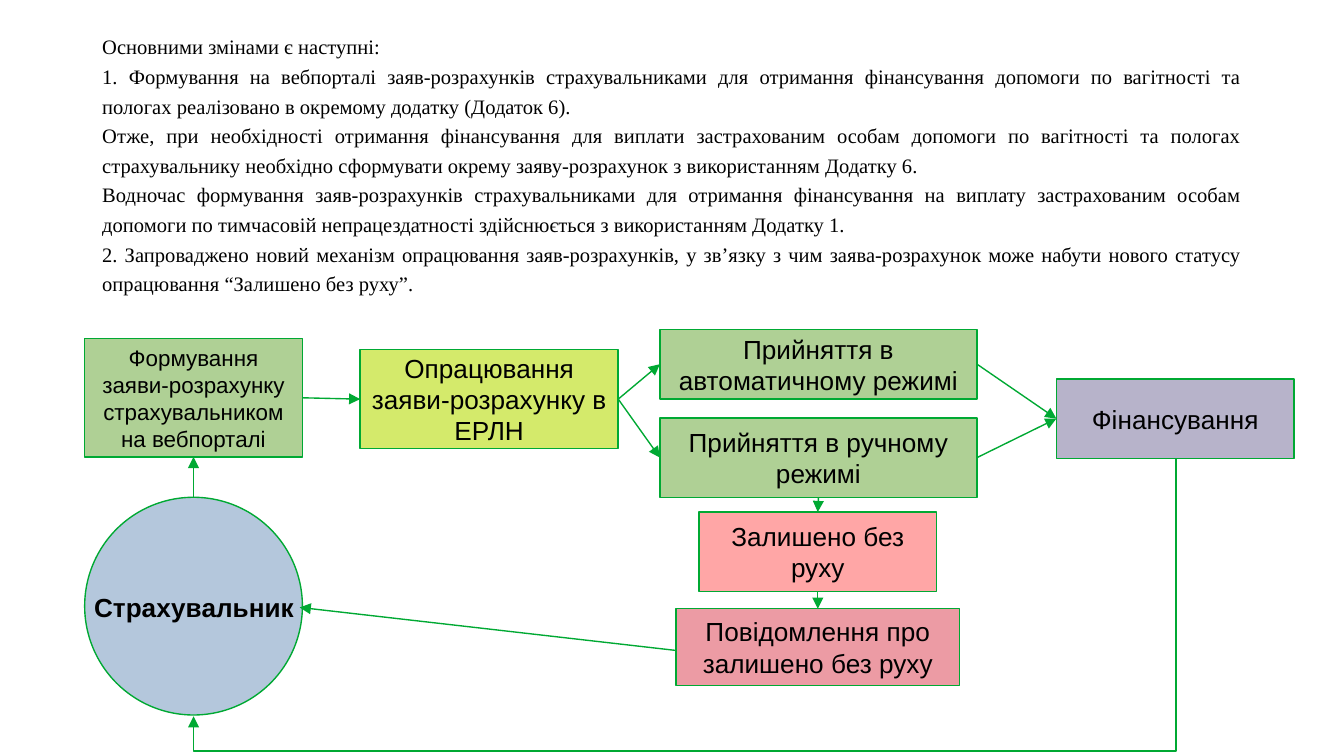
from dataclasses import dataclass

from lxml.etree import SubElement
from pptx import Presentation
from pptx.dml.color import RGBColor
from pptx.enum.shapes import MSO_CONNECTOR, MSO_SHAPE
from pptx.enum.text import MSO_ANCHOR, PP_ALIGN
from pptx.oxml.ns import qn
from pptx.util import Inches, Pt

TOP, LEFT, BOTTOM, RIGHT = range(4)


@dataclass(frozen=True)
class Theme:
    """Colours, fonts and type sizes of the slide."""
    text: str = "000000"
    line: str = "00A933"
    green: str = "AFD095"
    lime: str = "D4EA6B"
    salmon: str = "FFA6A6"
    pink: str = "EC9BA4"
    violet: str = "B7B3CA"
    blue: str = "B4C7DC"
    body_font: str = "Times New Roman"
    label_font: str = "Arial"
    body_size: float = 11
    small_size: float = 12
    label_size: float = 14
    line_width: float = 0.75


def write_text(frame, *texts, font, size, color, bold=False,
               align=PP_ALIGN.LEFT, anchor=MSO_ANCHOR.TOP, spacing=1.0):
    """Fill a text frame with one paragraph per text."""
    frame.word_wrap = True
    frame.vertical_anchor = anchor
    frame.margin_left = frame.margin_right = Inches(0.07)
    frame.margin_top = frame.margin_bottom = Inches(0.04)
    for index, text in enumerate(texts):
        paragraph = frame.add_paragraph() if index else frame.paragraphs[0]
        paragraph.alignment = align
        paragraph.line_spacing = spacing
        run = paragraph.add_run()
        run.text = text
        run.font.name = font
        run.font.size = Pt(size)
        run.font.bold = bold
        run.font.color.rgb = RGBColor.from_string(color)


class FlowSlide:
    """Draws flow chart elements on one slide in one style."""

    def __init__(self, slide, theme):
        self.slide = slide
        self.theme = theme

    def text(self, box, *texts, **style):
        """Add a text box."""
        shape = self.slide.shapes.add_textbox(*map(Inches, box))
        write_text(shape.text_frame, *texts, color=self.theme.text, **style)

    def node(self, box, fill, kind=MSO_SHAPE.RECTANGLE):
        """Add a filled and outlined shape."""
        shape = self.slide.shapes.add_shape(kind, *map(Inches, box))
        shape.shadow.inherit = False
        shape.fill.solid()
        shape.fill.fore_color.rgb = RGBColor.from_string(fill)
        self.outline(shape)
        return shape

    def step(self, box, fill, label, size=None):
        """Add a rectangle with a centred label."""
        shape = self.node(box, fill)
        write_text(shape.text_frame, label, font=self.theme.label_font,
                   size=size or self.theme.label_size, color=self.theme.text,
                   align=PP_ALIGN.CENTER, anchor=MSO_ANCHOR.MIDDLE)
        return shape

    def outline(self, shape):
        """Give a shape or connector the common line."""
        shape.line.color.rgb = RGBColor.from_string(self.theme.line)
        shape.line.width = Pt(self.theme.line_width)

    def connector(self, kind, start, end):
        """Add a connector with an arrowhead at its end."""
        connector = self.slide.shapes.add_connector(
            kind, *map(Inches, (*start, *end)))
        self.outline(connector)
        properties = connector._element.spPr
        SubElement(properties.find(qn("a:ln")), qn("a:tailEnd"), type="triangle")
        SubElement(properties, qn("a:effectLst"))
        return connector

    def arrow(self, source, target):
        """Join two ends, each a point or a shape with a side."""
        def is_point(end):
            return isinstance(end[0], (int, float))

        connector = self.connector(
            MSO_CONNECTOR.STRAIGHT,
            source if is_point(source) else (0, 0),
            target if is_point(target) else (0, 0))
        if not is_point(source):
            connector.begin_connect(*source)
        if not is_point(target):
            connector.end_connect(*target)

    def return_arrow(self, start, end, lowest):
        """Add an elbow that runs down, left along the lowest level, and up."""
        width, height = end[1] - start[1], start[0] - end[0]
        left = (start[0] + end[0] - width) / 2
        top = (start[1] + end[1] - height) / 2
        connector = self.connector(MSO_CONNECTOR.ELBOW, (left, top),
                                   (left + width, top + height))
        properties = connector._element.spPr
        properties.find(qn("a:xfrm")).set("rot", str(90 * 60000))
        ratio = round((lowest - start[1]) / width * 100000)
        guides = properties.find(qn("a:prstGeom")).find(qn("a:avLst"))
        SubElement(guides, qn("a:gd"), name="adj1", fmla=f"val {ratio}")


def main():
    """Build and save the presentation."""
    presentation = Presentation()
    presentation.slide_width = Inches(10)
    presentation.slide_height = presentation.slide_width * 9 // 16
    theme = Theme()
    flow = FlowSlide(
        presentation.slides.add_slide(presentation.slide_layouts[6]), theme)

    flow.text(
        (0.69, 0.18, 8.62, 2.06),
        "Основними змінами є наступні:",
        "1. Формування на вебпорталі заяв-розрахунків страхувальниками для отримання "
        "фінансування допомоги по вагітності та пологах реалізовано в окремому додатку "
        "(Додаток 6).",
        "Отже, при необхідності отримання фінансування для виплати застрахованим особам "
        "допомоги по вагітності та пологах страхувальнику необхідно сформувати окрему "
        "заяву-розрахунок з використанням Додатку 6.",
        "Водночас формування заяв-розрахунків страхувальниками для отримання фінансування "
        "на виплату застрахованим особам допомоги по тимчасовій непрацездатності "
        "здійснюється з використанням Додатку 1.",
        "2. Запроваджено новий механізм опрацювання заяв-розрахунків, у зв’язку з чим "
        "заява-розрахунок може набути нового статусу опрацювання “Залишено без руху”.",
        font=theme.body_font, size=theme.body_size,
        align=PP_ALIGN.JUSTIFY, spacing=1.2)

    application = flow.step(
        (0.63, 2.52, 1.62, 0.88), theme.green,
        "Формування заяви-розрахунку страхувальником на вебпорталі", theme.small_size)
    processing = flow.step((2.68, 2.6, 1.92, 0.74), theme.lime,
                           "Опрацювання заяви-розрахунку в ЕРЛН")
    automatic = flow.step((4.91, 2.45, 2.36, 0.52), theme.green,
                          "Прийняття в автоматичному режимі")
    manual = flow.step((4.91, 3.11, 2.36, 0.59), theme.green,
                       "Прийняття в ручному режимі")
    suspended = flow.step((5.2, 3.81, 1.77, 0.59), theme.salmon, "Залишено без руху")
    financing = flow.step((7.86, 2.82, 1.77, 0.59), theme.violet, "Фінансування")
    notice = flow.step((5.03, 4.53, 2.11, 0.57), theme.pink,
                       "Повідомлення про залишено без руху")
    flow.node((0.63, 3.7, 1.62, 1.62), theme.blue, MSO_SHAPE.OVAL)
    flow.text((0.63, 4.36, 1.69, 0.28), "Страхувальник",
              font=theme.label_font, size=theme.label_size, bold=True)

    for source, target in (
        ((application, RIGHT), (processing, LEFT)),
        ((1.44, 3.7), (application, BOTTOM)),
        ((processing, RIGHT), (automatic, LEFT)),
        ((processing, RIGHT), (manual, LEFT)),
        ((automatic, RIGHT), (financing, LEFT)),
        ((manual, RIGHT), (financing, LEFT)),
        ((manual, BOTTOM), (suspended, TOP)),
        ((suspended, BOTTOM), (notice, TOP)),
        ((5.03, 4.84), (2.23, 4.52)),
    ):
        flow.arrow(source, target)
    flow.return_arrow((8.75, 3.41), (1.44, 5.33), lowest=5.59)

    presentation.save("out.pptx")


if __name__ == "__main__":
    main()
